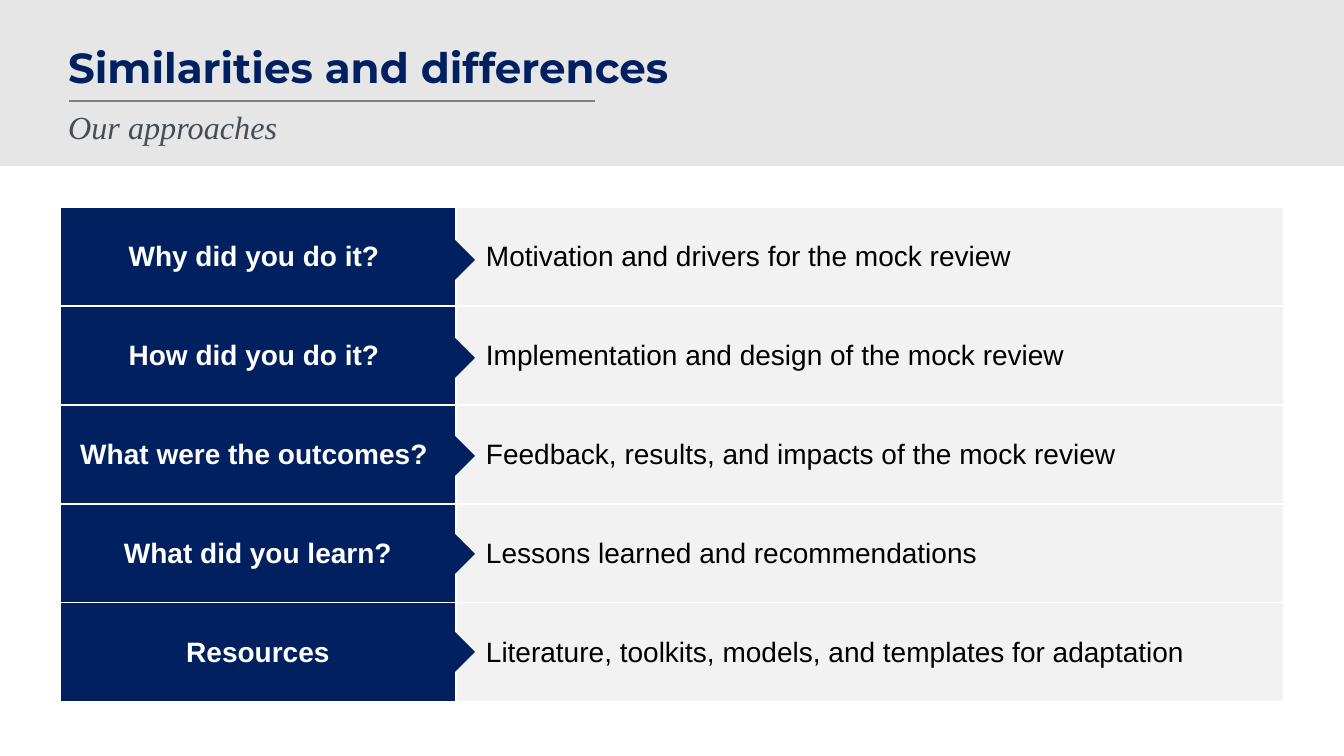
from lxml.etree import SubElement
from pptx import Presentation
from pptx.dml.color import RGBColor
from pptx.enum.shapes import MSO_CONNECTOR as Line, MSO_SHAPE as Kind
from pptx.enum.text import MSO_ANCHOR as Anchor, MSO_AUTO_SIZE as Auto, PP_ALIGN as Align
from pptx.oxml.ns import qn
from pptx.util import Pt

NAVY = RGBColor(0x00, 0x20, 0x60)
SLATE = RGBColor(0x45, 0x4D, 0x55)
BAND = RGBColor(0xE6, 0xE6, 0xE6)
RULE = RGBColor(0x80, 0x80, 0x80)
PALE = RGBColor(0xF2, 0xF2, 0xF2)
WHITE = RGBColor(0xFF, 0xFF, 0xFF)
BLACK = RGBColor(0x00, 0x00, 0x00)

WIDE, HIGH = 1344, 756
ROWS = [
    ("Why did you do it? ", "Motivation and drivers for the mock review"),
    ("How did you do it? ", "Implementation and design of the mock review"),
    ("What were the outcomes? ", "Feedback, results, and impacts of the mock review"),
    ("What did you learn?", "Lessons learned and recommendations"),
    ("Resources", "Literature, toolkits, models, and templates for adaptation"),
]


def px(n):
    return round(n * 914400 / 100.8)


def write(para, text, face, size, color, bold=False, italic=False):
    run = para.add_run()
    run.text = text
    font = run.font
    font.name, font.size = face, Pt(size)
    font.bold, font.italic = bold, italic
    font.color.rgb = color


def solid(slide, kind, box, color):
    shape = slide.shapes.add_shape(kind, *map(px, box))
    shape.shadow.inherit = False
    shape.fill.solid()
    shape.fill.fore_color.rgb = color
    shape.line.fill.background()
    return shape


def place(holder, box, anchor):
    """Move a placeholder and return its first paragraph, plain and left-aligned."""
    holder.left, holder.top, holder.width, holder.height = map(px, box)
    frame = holder.text_frame
    frame.auto_size, frame.vertical_anchor = Auto.NONE, anchor
    para = frame.paragraphs[0]
    props = para._p.get_or_add_pPr()
    props.set("marL", "0")
    props.set("indent", "0")
    SubElement(props, qn("a:buNone"))
    para.alignment, para.line_spacing, para.space_before = Align.LEFT, 0.9, Pt(0)
    return para


def header(slide, box):
    x, y, w, h = box
    band = solid(slide, Kind.RECTANGLE, box, BAND)
    slide.shapes._spTree.insert(2, band._element)
    rule = slide.shapes.add_connector(
        Line.STRAIGHT, px(x + 69), px(y + 101), px(x + 595), px(y + 101))
    rule.line.color.rgb, rule.line.width = RULE, Pt(1.5)
    SubElement(rule._element.spPr, qn("a:effectLst"))
    title, body = slide.placeholders
    para = place(title, (x + 58, y + 30, 1180, 80), Anchor.MIDDLE)
    write(para, "Similarities and differences", "Montserrat", 30, NAVY, bold=True)
    para = place(body, (x + 58, y + 107, 1180, 45), Anchor.TOP)
    write(para, "Our approaches", "Times New Roman", 23, SLATE, italic=True)


def border(cell):
    props = cell._tc.get_or_add_tcPr()
    for side in "LRTB":
        line = SubElement(props, qn(f"a:ln{side}"), w=str(Pt(1)))
        fill = SubElement(line, qn("a:solidFill"))
        SubElement(fill, qn("a:srgbClr"), val=str(WHITE))


def topics(slide, box):
    """Table of questions and answers, with an arrow tip between each pair."""
    x, y, w, h = box
    left, tip = 396, 40
    high = h // len(ROWS)
    table = slide.shapes.add_table(len(ROWS), 2, *map(px, box)).table
    table.first_row = table.horz_banding = False
    table.columns[0].width, table.columns[1].width = px(left), px(w - left)
    looks = [(NAVY, WHITE, True, Align.CENTER, 10), (PALE, BLACK, False, Align.LEFT, 30)]
    for i, pair in enumerate(ROWS):
        table.rows[i].height = px(high)
        for j, (fill, color, bold, align, inset) in enumerate(looks):
            cell = table.cell(i, j)
            border(cell)
            cell.fill.solid()
            cell.fill.fore_color.rgb = fill
            cell.vertical_anchor = Anchor.MIDDLE
            cell.margin_left = px(inset)
            para = cell.text_frame.paragraphs[0]
            para.alignment = align
            write(para, pair[j], "Arial", 20, color, bold)
    for i in range(len(ROWS)):
        spot = (x + left - 11, y + 43 + i * (high - 1), tip, tip // 2)
        solid(slide, Kind.ISOSCELES_TRIANGLE, spot, NAVY).rotation = 90


def main():
    deck = Presentation()
    deck.slide_width, deck.slide_height = px(WIDE), px(HIGH)
    slide = deck.slides.add_slide(deck.slide_layouts[1])
    header(slide, (0, 0, WIDE, 166))
    topics(slide, (60, 207, 1224, 495))
    deck.save("out.pptx")


if __name__ == "__main__":
    main()
